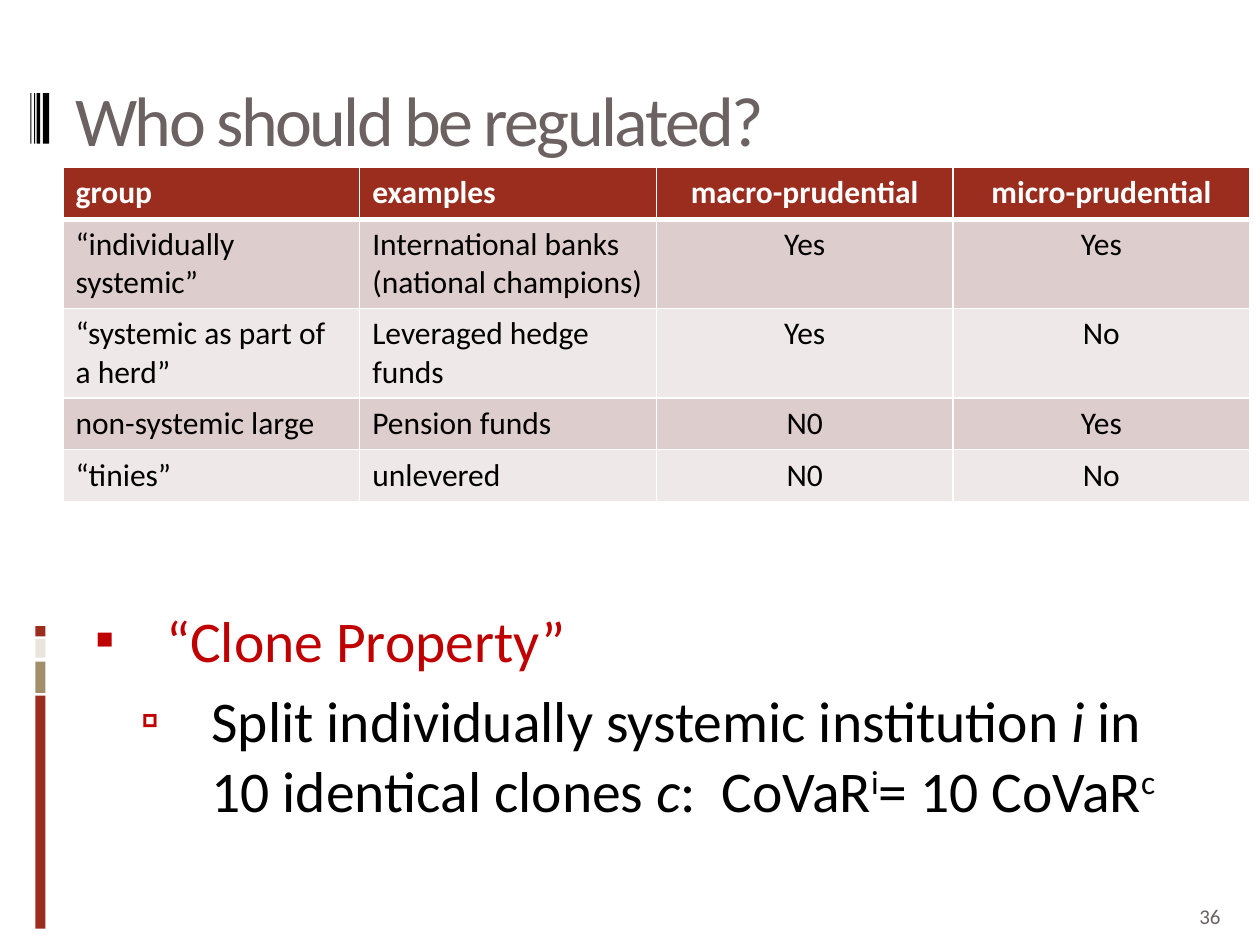
from lxml import etree
from pptx import Presentation
from pptx.dml.color import RGBColor
from pptx.enum.shapes import MSO_SHAPE
from pptx.enum.text import MSO_ANCHOR, PP_ALIGN
from pptx.oxml.ns import qn
from pptx.util import Inches, Pt

RECTANGLE = MSO_SHAPE.RECTANGLE
TOP, MIDDLE, BOTTOM = MSO_ANCHOR.TOP, MSO_ANCHOR.MIDDLE, MSO_ANCHOR.BOTTOM
LEFT, CENTER = PP_ALIGN.LEFT, PP_ALIGN.CENTER
FONT = "Calibri"
BLACK = RGBColor(0x00, 0x00, 0x00)
WHITE = RGBColor(0xFF, 0xFF, 0xFF)
BRICK = RGBColor(0x9B, 0x2D, 0x1F)
TAN = RGBColor(0xA2, 0x8E, 0x6A)
SAND = RGBColor(0xE9, 0xE5, 0xDC)
RED = RGBColor(0xC0, 0x00, 0x00)
TITLE_GRAY = RGBColor(0x6C, 0x62, 0x62)
NUMBER_GRAY = RGBColor(0x69, 0x64, 0x64)
ROSE = RGBColor(0xDE, 0xCD, 0xCD)
PALE_ROSE = RGBColor(0xEF, 0xE8, 0xE8)


def add_span(para, text, size, color, bold=False, italic=False):
    span = para.add_run()
    span.text = text
    span.font.name = FONT
    span.font.size = Pt(size)
    span.font.color.rgb = color
    span.font.bold = bold
    span.font.italic = italic
    return span


def add_text_box(left, top, width, height, anchor):
    box = page.shapes.add_textbox(Inches(left), Inches(top), Inches(width), Inches(height))
    box.text_frame.word_wrap = True
    box.text_frame.vertical_anchor = anchor
    return box.text_frame


deck = Presentation()
deck.slide_width = Inches(10)
deck.slide_height = Inches(7.5)
page = deck.slides.add_slide(deck.slide_layouts[6])

bars = [
    (0.28, 5.52, 0.08, 1.85, BRICK),
    (0.28, 5.25, 0.08, 0.25, TAN),
    (0.28, 5.07, 0.08, 0.15, SAND),
    (0.28, 4.97, 0.08, 0.08, BRICK),
    (0.34, 0.74, 0.05, 0.4, BLACK),
    (0.29, 0.74, 0.03, 0.4, BLACK),
    (0.27, 0.74, 0.01, 0.4, BLACK),
    (0.24, 0.74, 0.01, 0.4, BLACK),
]
for left, top, width, height, color in bars:
    bar = page.shapes.add_shape(RECTANGLE, Inches(left), Inches(top), Inches(width), Inches(height))
    bar.shadow.inherit = False
    bar.fill.solid()
    bar.fill.fore_color.rgb = color
    bar.line.fill.background()

title = add_text_box(0.5, 0.23, 9, 1.42, MIDDLE)
title_span = add_span(title.paragraphs[0], "Who should be regulated?", 40, TITLE_GRAY)
title_span.font._element.set("spc", "-150")

body = add_text_box(0.58, 4.75, 9.01, 1.95, TOP)
bullets = [
    (0, 0.64, 7, "▪", 95, RED, [("“Clone Property”", "")]),
    (1, 1, 6.6, "▫", 90, BLACK, [
        ("Split individually systemic institution ", ""),
        ("i", "italic"),
        (" in 10 identical clones ", ""),
        ("c", "italic"),
        (":  CoVaR", ""),
        ("i", "super"),
        ("= 10 CoVaR", ""),
        ("c", "super"),
    ]),
]
for index, (level, margin, space, mark, mark_size, color, parts) in enumerate(bullets):
    para = body.paragraphs[0] if index == 0 else body.add_paragraph()
    para.level = level
    para.space_before = Pt(space)
    props = para._p.get_or_add_pPr()
    props.set("marL", str(Inches(margin)))
    props.set("indent", str(Inches(-0.56)))
    mark_color = etree.SubElement(props, qn("a:buClr"))
    etree.SubElement(mark_color, qn("a:srgbClr"), val=str(RED))
    etree.SubElement(props, qn("a:buSzPct"), val=str(mark_size * 1000))
    etree.SubElement(props, qn("a:buFont"), typeface=FONT)
    etree.SubElement(props, qn("a:buChar"), char=mark)
    for text, style in parts:
        span = add_span(para, text, 32.9, color, italic=style == "italic")
        if style == "super":
            span.font._element.set("baseline", "30000")

number = add_text_box(9.42, 7.02, 0.5, 0.4, BOTTOM)
add_span(number.paragraphs[0], "36", 12, NUMBER_GRAY)

rows = [
    ("group", "examples", "macro-prudential", "micro-prudential"),
    ("“individually systemic”", "International banks\n(national champions)", "Yes", "Yes"),
    ("“systemic as part of a herd”", "Leveraged hedge funds", "Yes", "No"),
    ("non-systemic large", "Pension funds", "N0", "Yes"),
    ("“tinies”", "unlevered", "N0", "No"),
]
row_heights = [0.41, 0.71, 0.71, 0.41, 0.41]
frame = page.shapes.add_table(
    len(rows), 4, Inches(0.5), Inches(1.33), Inches(9.42), Inches(sum(row_heights)))
table = frame.table
for column in table.columns:
    column.width = Inches(9.42 / 4)
for row_index, (texts, height) in enumerate(zip(rows, row_heights)):
    table.rows[row_index].height = Inches(height)
    header = row_index == 0
    fill_color = BRICK if header else (PALE_ROSE, ROSE)[row_index % 2]
    for column_index, text in enumerate(texts):
        cell = table.cell(row_index, column_index)
        para = cell.text_frame.paragraphs[0]
        para.alignment = CENTER if column_index > 1 else LEFT
        for line_index, line in enumerate(text.split("\n")):
            if line_index:
                para.add_line_break()
            add_span(para, line, 18, WHITE if header else BLACK, bold=header)
        props = cell._tc.get_or_add_tcPr()
        for side in ("lnL", "lnR", "lnT", "lnB"):
            thick = (header and side == "lnB") or (row_index == 1 and side == "lnT")
            border = etree.SubElement(props, qn("a:" + side), w=str(Pt(3 if thick else 1)))
            border_fill = etree.SubElement(border, qn("a:solidFill"))
            etree.SubElement(border_fill, qn("a:srgbClr"), val=str(WHITE))
        cell.fill.solid()
        cell.fill.fore_color.rgb = fill_color

deck.save("out.pptx")
